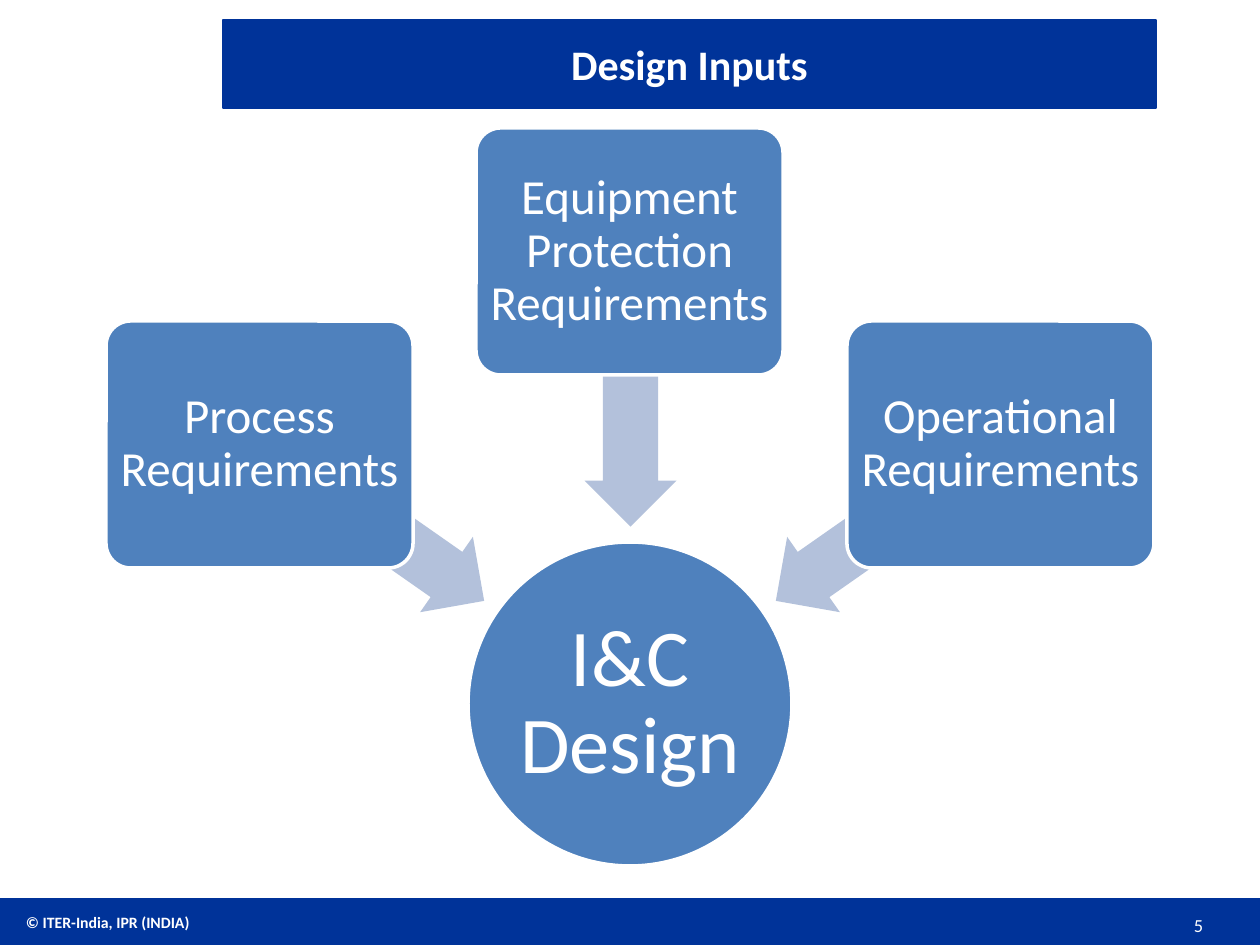
from pptx import Presentation
from pptx.dml.color import RGBColor
from pptx.enum.shapes import MSO_SHAPE
from pptx.enum.text import MSO_ANCHOR, PP_ALIGN
from pptx.util import Pt

RECT, OVAL = MSO_SHAPE.RECTANGLE, MSO_SHAPE.OVAL
ROUNDED, ARROW = MSO_SHAPE.ROUNDED_RECTANGLE, MSO_SHAPE.LEFT_ARROW
LEFT, CENTER, RIGHT = PP_ALIGN.LEFT, PP_ALIGN.CENTER, PP_ALIGN.RIGHT
MIDDLE = MSO_ANCHOR.MIDDLE

EMU_PER_PX = 914400 / 126
NAVY, BLUE, PALE, WHITE = "003399", "4F81BD", "B3C1DB", "FFFFFF"


def emu(*lengths):
    return [round(length * EMU_PER_PX) for length in lengths]


def write(target, text, size, bold=False, align=CENTER, spacing=1, margins=(12, 6)):
    frame = target.text_frame
    frame.word_wrap = True
    frame.vertical_anchor = MIDDLE
    frame.margin_left, frame.margin_top = emu(*margins)
    frame.margin_right, frame.margin_bottom = emu(*margins)
    frame.text = text
    paragraph = frame.paragraphs[0]
    paragraph.alignment = align
    paragraph.line_spacing = spacing
    font = paragraph.font
    font.name, font.size, font.bold = "Calibri", Pt(size), bold
    font.color.rgb = RGBColor.from_string(WHITE)


prs = Presentation()
prs.slide_width, prs.slide_height = emu(1260, 945)
slide = prs.slides.add_slide(prs.slide_layouts[5])
shapes = slide.shapes

# Title band
title = shapes.title
title.left, title.top, title.width, title.height = emu(223, 20, 933, 88)
title.fill.solid()
title.fill.fore_color.rgb = RGBColor.from_string(NAVY)
title.line.color.rgb = RGBColor.from_string(NAVY)
title.line.width = Pt(0.75)
write(title, "Design Inputs", 24, bold=True)

# Footer band, then the design circle, then each arrow below its input box
inputs = [
    ("Process Requirements", 106, 321, 234, 476, 215),
    ("Equipment Protection Requirements", 476, 128, 493, 343, 270),
    ("Operational Requirements", 847, 321, 751, 476, 325),
]
parts = [
    (RECT, (0, 900, 1260, 45), NAVY, NAVY, 0, [], "", 0),
    (OVAL, (468, 542, 324, 324), BLUE, WHITE, 0, [], "I&C Design", 46),
]
for label, box_x, box_y, arrow_x, arrow_y, angle in inputs:
    parts += [
        (ARROW, (arrow_x, arrow_y, 275, 92), PALE, None, angle, [0.6, 0.5], "", 0),
        (ROUNDED, (box_x, box_y, 307, 247), BLUE, WHITE, 0, [0.1], label, 28),
    ]

for kind, place, fill, outline, angle, adjustments, label, size in parts:
    part = shapes.add_shape(kind, *emu(*place))
    part.shadow.inherit = False
    part.rotation = angle
    for index, value in enumerate(adjustments):
        part.adjustments[index] = value
    part.fill.solid()
    part.fill.fore_color.rgb = RGBColor.from_string(fill)
    if outline:
        part.line.color.rgb = RGBColor.from_string(outline)
        part.line.width = Pt(2)
    else:
        part.line.fill.background()
    if label:
        write(part, label, size, spacing=0.9, margins=(4, 4))

# Footer text
copyright_line = shapes.add_textbox(*emu(17, 905, 316, 34))
write(copyright_line, "© ITER-India, IPR (INDIA)", 9, bold=True, align=LEFT, margins=(9, 5))
page_number = shapes.add_textbox(*emu(985, 906, 230, 39))
write(page_number, "5", 10.5, align=RIGHT)

prs.save("out.pptx")
